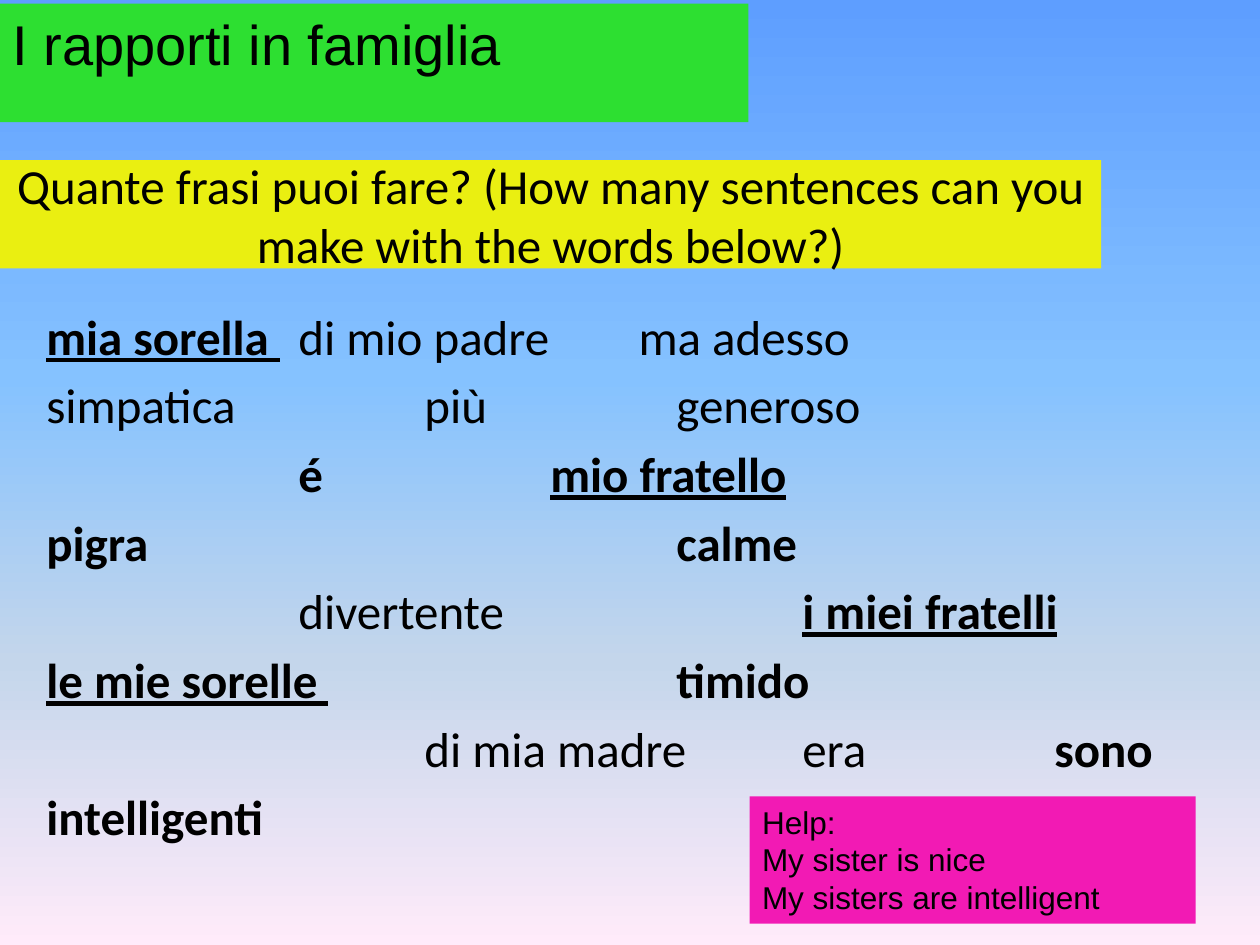
from lxml import etree
from pptx import Presentation
from pptx.dml.color import RGBColor
from pptx.enum.shapes import MSO_SHAPE
from pptx.enum.text import MSO_ANCHOR, MSO_AUTO_SIZE, PP_ALIGN
from pptx.oxml.ns import qn
from pptx.util import Inches, Pt

RECTANGLE = MSO_SHAPE.RECTANGLE
TOP, MIDDLE = MSO_ANCHOR.TOP, MSO_ANCHOR.MIDDLE
LEFT, CENTER = PP_ALIGN.LEFT, PP_ALIGN.CENTER
NO_AUTOFIT = MSO_AUTO_SIZE.NONE

BLACK = RGBColor(0x00, 0x00, 0x00)
GREEN = RGBColor(0x2D, 0xDF, 0x31)
YELLOW = RGBColor(0xEA, 0xEF, 0x11)
PINK = RGBColor(0xF2, 0x1A, 0xB4)
SKY = [
    (0, RGBColor(0x5E, 0x9E, 0xFF)),
    (40, RGBColor(0x85, 0xC2, 0xFF)),
    (70, RGBColor(0xC4, 0xD6, 0xEB)),
    (100, RGBColor(0xFF, 0xEB, 0xFA)),
]

PLAIN = {"bold": False, "underline": False}
BOLD = {"bold": True, "underline": False}
KEY = {"bold": True, "underline": True}

WORD_LINES = [
    [("mia sorella ", KEY), ("\tdi mio padre\tma adesso", PLAIN)],
    [("simpatica\t\tpiù\t\tgeneroso", PLAIN)],
    [("\t\té\t\t", BOLD), ("mio fratello", KEY)],
    [("pigra\t\t\t\t\tcalme", BOLD)],
    [("\t\tdivertente\t\t\t", PLAIN), ("i miei fratelli", KEY)],
    [("le mie sorelle ", KEY), ("\t\t\t", PLAIN), ("timido", BOLD)],
    [("\t\t\tdi mia madre\tera\t\t", PLAIN), ("sono", BOLD)],
    [("intelligenti", BOLD)],
]
FIRST_LINE_TABS = [2, 4.7]
INCH_TABS = range(1, 9)


def set_background(s):
    fill = s.background.fill
    fill.gradient()
    fill.gradient_angle = 270
    stops = s.background._cSld.find(".//" + qn("a:gsLst"))
    for stop in list(stops):
        stops.remove(stop)
    for percent, color in SKY:
        stop = etree.SubElement(stops, qn("a:gs"), pos=str(percent * 1000))
        etree.SubElement(stop, qn("a:srgbClr"), val=str(color))


def place(sp, left, top, width, height):
    sp.left, sp.top = Inches(left), Inches(top)
    sp.width, sp.height = Inches(width), Inches(height)


def add_run(p, text, font, size, **style):
    r = p.add_run()
    r.text = text
    r.font.color.rgb = BLACK
    for name, value in {"name": font, "size": Pt(size), **style}.items():
        setattr(r.font, name, value)


def set_frame(tf, anchor):
    tf.word_wrap = True
    tf.auto_size = NO_AUTOFIT
    tf.vertical_anchor = anchor


def add_title(s, text, box):
    sp = s.shapes.title
    place(sp, *box)
    sp.fill.solid()
    sp.fill.fore_color.rgb = YELLOW
    set_frame(sp.text_frame, MIDDLE)
    p = sp.text_frame.paragraphs[0]
    p.alignment = CENTER
    add_run(p, text, "Calibri", 28)


def add_panel(s, lines, box, color, size):
    sp = s.shapes.add_shape(RECTANGLE, *map(Inches, box))
    sp.shadow.inherit = False
    sp.fill.solid()
    sp.fill.fore_color.rgb = color
    sp.line.fill.background()
    tf = sp.text_frame
    set_frame(tf, TOP)
    for i, line in enumerate(lines):
        p = tf.add_paragraph() if i else tf.paragraphs[0]
        p.alignment = LEFT
        add_run(p, line, "Arial", size)


def set_tabs(p, positions):
    tabs = etree.SubElement(p._p.get_or_add_pPr(), qn("a:tabLst"))
    for position in positions:
        etree.SubElement(tabs, qn("a:tab"), pos=str(Inches(position)), algn="l")


def add_words(s, box):
    tf = s.shapes.add_textbox(*map(Inches, box)).text_frame
    set_frame(tf, TOP)
    for i, line in enumerate(WORD_LINES):
        p = tf.add_paragraph() if i else tf.paragraphs[0]
        p.space_before = Pt(5.6)
        set_tabs(p, INCH_TABS if i else FIRST_LINE_TABS)
        for text, style in line:
            add_run(p, text, "Calibri", 28, **style)


def main():
    prs = Presentation()
    prs.slide_width, prs.slide_height = Inches(10), Inches(7.5)
    s = prs.slides.add_slide(prs.slide_layouts[5])
    set_background(s)
    add_words(s, (0.27, 2.38, 9, 4.95))
    add_panel(s, ["Help:", "My sister is nice", "My sisters are intelligent"],
              (5.95, 6.32, 3.54, 1.01), PINK, 18)
    add_panel(s, ["I rapporti in famiglia"], (0, 0.03, 5.94, 0.94), GREEN, 32)
    add_title(s, "Quante frasi puoi fare? (How many sentences can you "
                 "make with the words below?)", (0, 1.27, 8.74, 0.86))
    prs.save("out.pptx")


if __name__ == "__main__":
    main()
